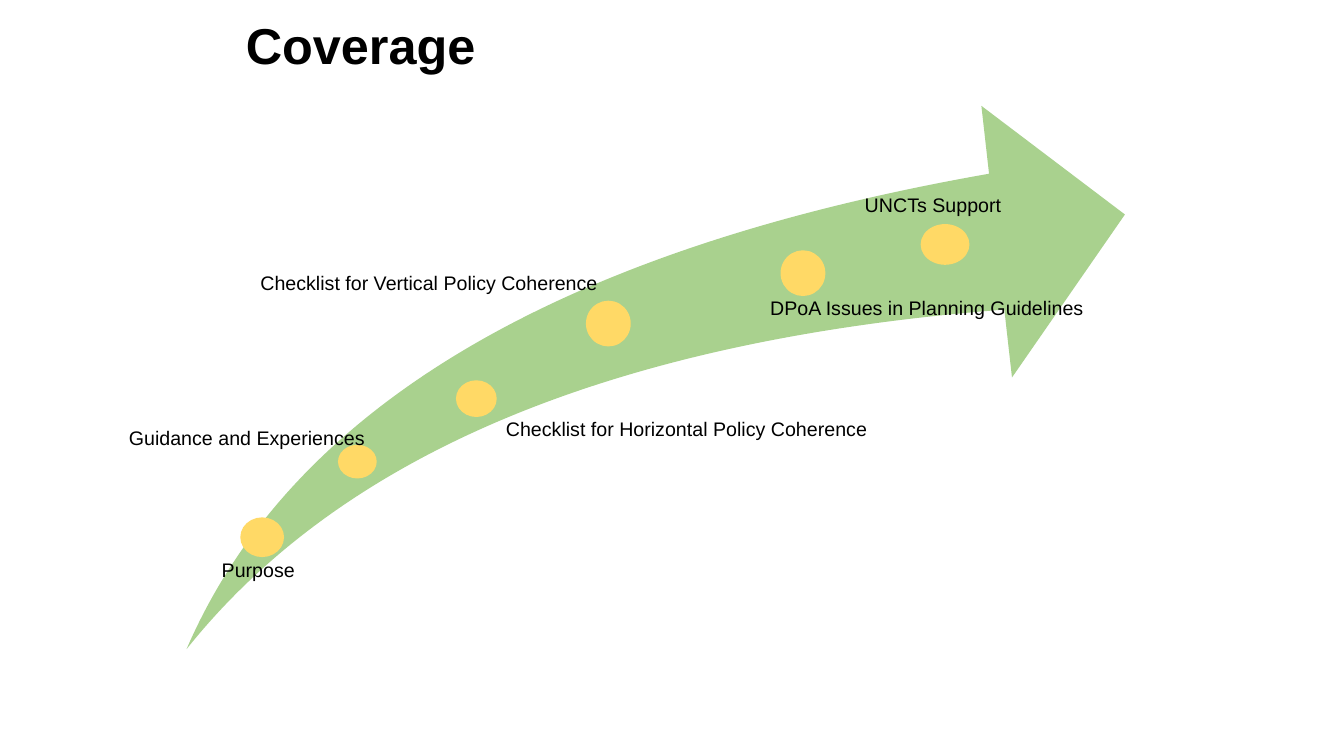
from pptx import Presentation
from pptx import util as u
from pptx.dml.color import RGBColor
from pptx.enum import shapes, text

COLORS = {"arrow": "A9D18E", "dot": "FFD966", "ink": "000000"}
LABEL = {"size": u.Pt(14), "bold": False}
TITLE = {"size": u.Pt(36), "bold": True}
PLAIN_INSETS = (0.1, 0.05, 0.1, 0.05)

MILESTONES = [
    ("Purpose", (17.93, 68.53, 3.15, 5.07), (15.6, 74.13, 66.75, 8.13),
     {"insets": (0.12, 0, 0, 0), "line_spacing": 0.9}),
    ("Guidance and Experiences", (25.2, 58.93, 2.78, 4.27),
     (8.85, 55.73, 24.53, 4.53), {}),
    ("Checklist for Horizontal Policy Coherence", (33.98, 50.4, 2.93, 4.67),
     (36.9, 54.53, 39.75, 4.53), {}),
    ("Checklist for Vertical Policy Coherence", (43.65, 39.87, 3.23, 5.87),
     (1.88, 35.2, 43.35, 4.53), {"alignment": text.PP_ALIGN.RIGHT}),
    ("DPoA Issues in Planning Guidelines", (58.13, 33.2, 3.23, 5.87),
     (55.05, 39.47, 29.33, 20.13),
     {"insets": (0.3, 0, 0, 0), "line_spacing": 0.9}),
    ("UNCTs Support", (68.55, 29.73, 3.53, 5.2),
     (63.6, 24.8, 15.98, 4.53), {}),
]


class CoverageSlide:
    font = "Arial"

    def __init__(self, deck):
        self.deck = deck
        self.page = deck.slides.add_slide(deck.slide_layouts[6])

    def place(self, percents):
        sides = (self.deck.slide_width, self.deck.slide_height) * 2
        return [int(side * percent / 100) for side, percent in zip(sides, percents)]

    def color(self, name):
        return RGBColor.from_string(COLORS[name])

    def shape(self, kind, area, color, outline=None):
        shape = self.page.shapes.add_shape(kind, *self.place(area))
        shape.shadow.inherit = False
        shape.fill.solid()
        shape.fill.fore_color.rgb = self.color(color)
        if outline:
            shape.line.color.rgb = self.color(color)
            shape.line.width = u.Pt(outline)
        else:
            shape.line.fill.background()
        return shape

    def arrow(self, area):
        arrow = self.shape(shapes.MSO_SHAPE.SWOOSH_ARROW, area, "arrow")
        for index in range(2):
            arrow.adjustments[index] = 0.25

    def dot(self, area):
        self.shape(shapes.MSO_SHAPE.OVAL, area, "dot", outline=1)

    def label(self, words, area, style, insets=PLAIN_INSETS, **layout):
        box = self.page.shapes.add_textbox(*self.place(area))
        frame = box.text_frame
        frame.word_wrap = True
        for side, inset in zip(("left", "top", "right", "bottom"), insets):
            setattr(frame, f"margin_{side}", u.Inches(inset))
        para = frame.paragraphs[0]
        for name, value in layout.items():
            setattr(para, name, value)
        span = para.add_run()
        span.text = words
        for name, value in {"name": self.font, **style}.items():
            setattr(span.font, name, value)
        span.font.color.rgb = self.color("ink")


def main():
    deck = Presentation()
    deck.slide_width, deck.slide_height = u.Inches(13.33), u.Inches(7.5)
    slide = CoverageSlide(deck)
    slide.arrow((13.88, 14, 69.82, 71.87))
    slide.label("Coverage", (17.55, 1.2, 66.23, 9.47), TITLE)
    for words, dot_area, label_area, layout in MILESTONES:
        slide.dot(dot_area)
        slide.label(words, label_area, LABEL, **layout)
    deck.save("out.pptx")


if __name__ == "__main__":
    main()
